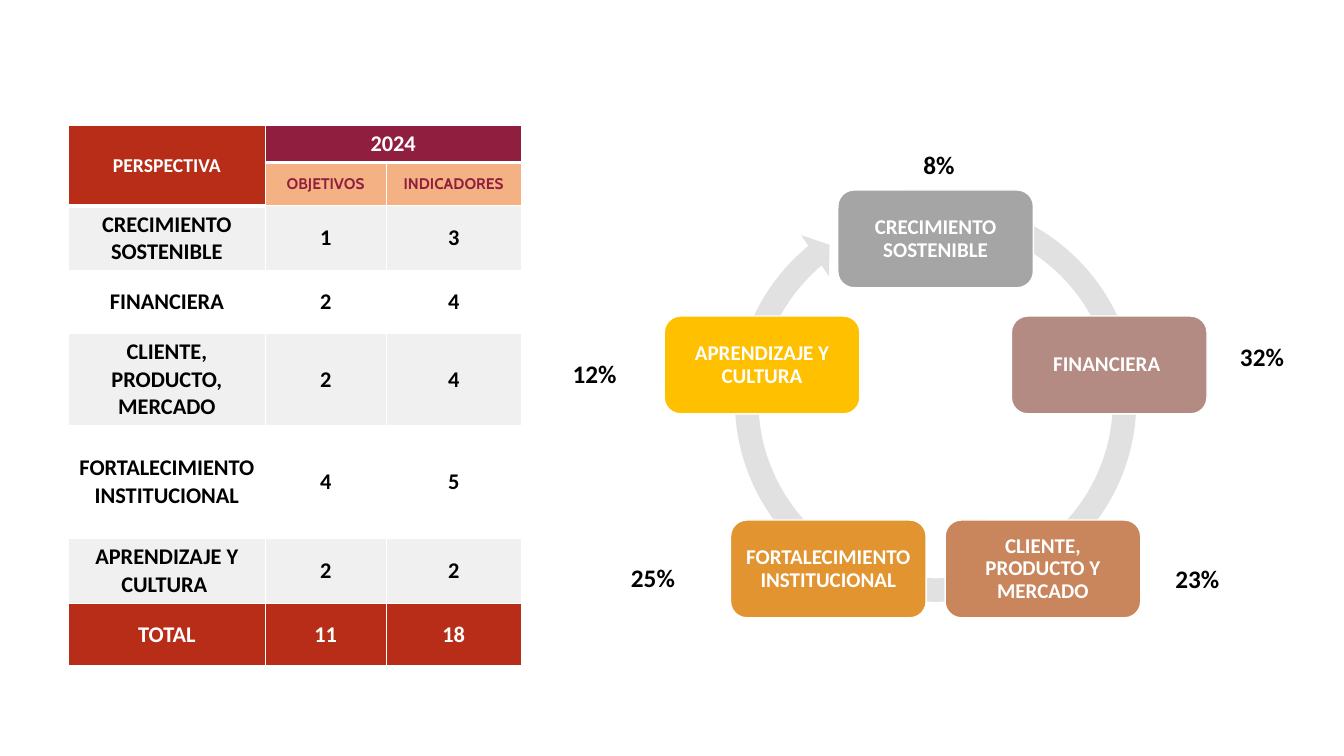
import math

import lxml.etree
import pptx
import pptx.dml.color
import pptx.enum.shapes
import pptx.enum.text
import pptx.oxml.ns
import pptx.util

EMU_PER_PX = 9144  # 100 px to the inch
WHITE, BLACK = "FFFFFF", "000000"
RED, WINE, PEACH, GREY = "B72D18", "901E3F", "F4B183", "F0F0F0"
CENTER = pptx.enum.text.PP_ALIGN.CENTER
MIDDLE = pptx.enum.text.MSO_ANCHOR.MIDDLE
SHAPES = pptx.enum.shapes.MSO_SHAPE

COLUMN_WIDTHS = [195, 120, 134]
ROW_HEIGHTS = [31, 43, 62, 62, 86, 112, 62, 62]
TABLE_ROWS = [
    ("PERSPECTIVA", "2024", ""),
    ("", "OBJETIVOS", "INDICADORES"),
    ("CRECIMIENTO SOSTENIBLE", "1", "3"),
    ("FINANCIERA", "2", "4"),
    ("CLIENTE, PRODUCTO, MERCADO", "2", "4"),
    ("FORTALECIMIENTO INSTITUCIONAL", "4", "5"),
    ("APRENDIZAJE Y CULTURA ", "2", "2"),
    ("TOTAL", "11", "18"),
]
# Clockwise from the top: name, fill
PERSPECTIVES = [
    ("CRECIMIENTO SOSTENIBLE", "A5A5A5"),
    ("FINANCIERA ", "B48B82"),
    ("CLIENTE, PRODUCTO Y MERCADO", "C9855C"),
    ("FORTALECIMIENTO INSTITUCIONAL", "E19430"),
    ("APRENDIZAJE Y CULTURA", "FFC000"),
]
# Share, left, top, width
SHARES = [
    ("8%", 906, 143, 58),
    ("32%", 1220, 334, 79),
    ("23%", 1156, 554, 79),
    ("25%", 616, 553, 79),
    ("12%", 558, 351, 79),
]


def px(length):
    return pptx.util.Emu(round(length * EMU_PER_PX))


def color(hex_string):
    return pptx.dml.color.RGBColor.from_string(hex_string)


def fill_with(target, hex_string):
    target.fill.solid()
    target.fill.fore_color.rgb = color(hex_string)


def write(frame, text, size, hex_string, font="Calibri", align=None):
    frame.text = text
    frame.word_wrap = True
    para = frame.paragraphs[0]
    para.alignment = align
    for span in para.runs:
        span.font.name = font
        span.font.size = pptx.util.Pt(size)
        span.font.bold = True
        span.font.color.rgb = color(hex_string)
    return para


def set_borders(cell, bottom_points):
    properties = cell._tc.get_or_add_tcPr()
    for side, points in (("L", 1), ("R", 1), ("T", 1), ("B", bottom_points)):
        line = lxml.etree.SubElement(properties, pptx.oxml.ns.qn("a:ln" + side),
                                     w=str(pptx.util.Pt(points)))
        solid = lxml.etree.SubElement(line, pptx.oxml.ns.qn("a:solidFill"))
        lxml.etree.SubElement(solid, pptx.oxml.ns.qn("a:srgbClr"), val=WHITE)


def cell_style(row, column):
    """Return fill, text colour, size and font of a table cell."""
    if row == len(TABLE_ROWS) - 1:
        return RED, WHITE, 16, "Calibri"
    if row < 2 and column == 0:
        return RED, WHITE, 14, "Calibri"
    if row == 0:
        return WINE, WHITE, 16, "Calibri"
    if row == 1:
        return PEACH, WINE, 11, "Cabin"
    return (WHITE if row % 2 else GREY), BLACK, 16, "Calibri"


def add_perspective_table(page, left, top, width, height):
    frame = page.shapes.add_table(len(TABLE_ROWS), len(COLUMN_WIDTHS),
                                  px(left), px(top), px(width), px(height))
    table = frame.table
    table.horz_banding = False
    for column, column_width in zip(table.columns, COLUMN_WIDTHS):
        column.width = px(column_width)
    for row, row_height in zip(table.rows, ROW_HEIGHTS):
        row.height = px(row_height)
    frame.height = px(height)

    # Header spans
    table.cell(0, 0).merge(table.cell(1, 0))
    table.cell(0, 1).merge(table.cell(0, 2))

    for row, texts in enumerate(TABLE_ROWS):
        for column, text in enumerate(texts):
            cell = table.cell(row, column)
            fill, ink, size, font = cell_style(row, column)
            set_borders(cell, 3 if row == 0 or cell.is_spanned else 1)
            fill_with(cell, fill)
            if not cell.is_spanned:
                write(cell.text_frame, text, size, ink, font, CENTER)
                if text != "2024":
                    cell.vertical_anchor = MIDDLE


def add_node(page, name, fill, left, top, width, height):
    box = page.shapes.add_shape(SHAPES.ROUNDED_RECTANGLE,
                                px(left), px(top), px(width), px(height))
    box.shadow.inherit = False
    fill_with(box, fill)
    box.line.color.rgb = color(WHITE)
    box.line.width = pptx.util.Pt(1)
    frame = box.text_frame
    frame.margin_left = frame.margin_right = px(9)
    frame.margin_top = frame.margin_bottom = px(9)
    frame.vertical_anchor = MIDDLE
    write(frame, name, 15, WHITE, align=CENTER).line_spacing = 0.9


def add_cycle(page, left, top, size):
    # Ring with its arrowhead
    ring = page.shapes.add_shape(SHAPES.CIRCULAR_ARROW,
                                 px(left), px(top), px(size), px(size))
    for index, value in enumerate((0.055, 3.307, 138.208, 173.587, 0.058)):
        ring.adjustments[index] = value
    ring.shadow.inherit = False
    fill_with(ring, "E1E1E1")
    ring.line.fill.background()

    # Nodes at equal angles
    width, height, radius = 194, 97, 181
    center_x, center_y = left + size / 2, top + size / 2 + 20
    for index, (name, fill) in enumerate(PERSPECTIVES):
        angle = 2 * math.pi * index / len(PERSPECTIVES)
        add_node(page, name, fill,
                 center_x + radius * math.sin(angle) - width / 2,
                 center_y - radius * math.cos(angle) - height / 2,
                 width, height)


def add_share(page, text, left, top, width):
    box = page.shapes.add_textbox(px(left), px(top), px(width), px(40))
    write(box.text_frame, text, 18, BLACK)


def main():
    deck = pptx.Presentation()
    deck.slide_width, deck.slide_height = px(1333), px(750)
    page = deck.slides.add_slide(deck.slide_layouts[6])
    add_cycle(page, 716, 186, 424)
    add_perspective_table(page, 68, 124, 449, 533)
    for share in SHARES:
        add_share(page, *share)
    deck.save("out.pptx")


if __name__ == "__main__":
    main()
